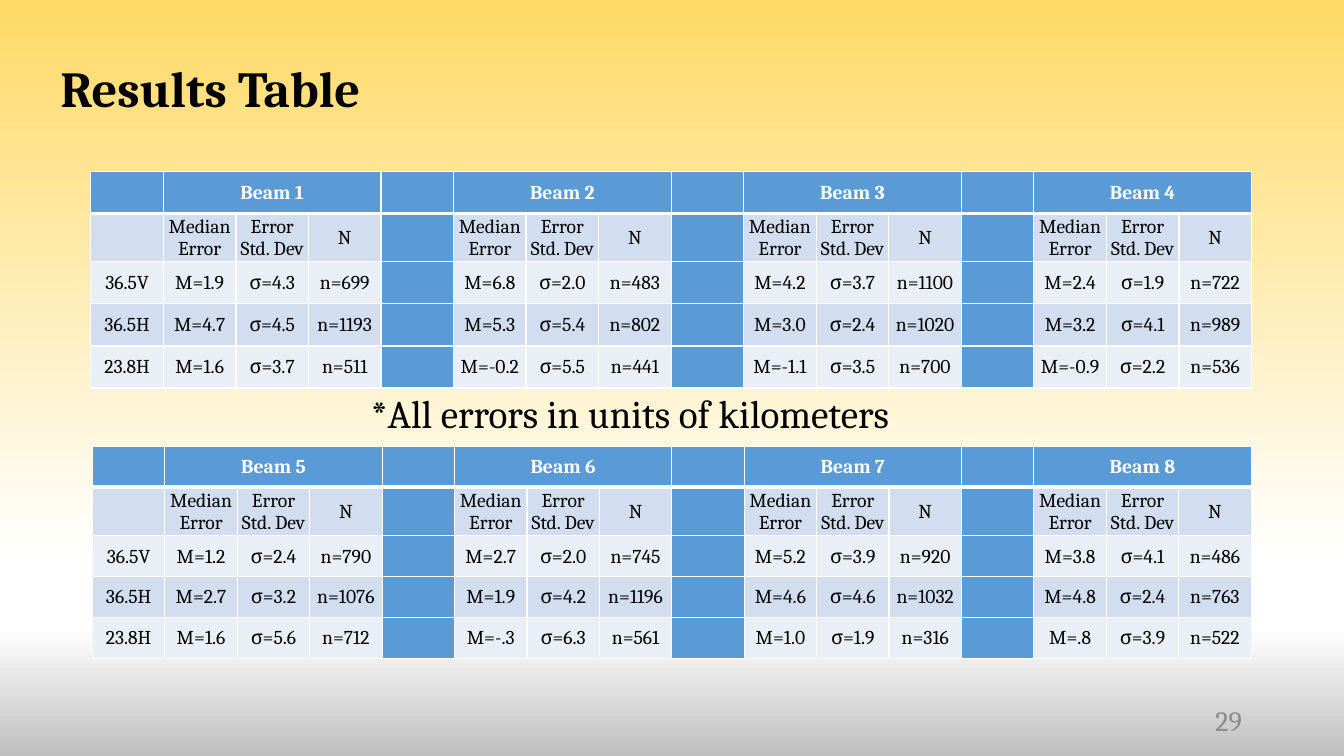
from lxml.etree import SubElement
from pptx import Presentation
from pptx.dml.color import RGBColor
from pptx.enum.text import MSO_ANCHOR, PP_ALIGN
from pptx.oxml.ns import qn
from pptx.util import Cm, Pt

BLACK = RGBColor(0x00, 0x00, 0x00)
WHITE = RGBColor(0xFF, 0xFF, 0xFF)
GRAY = RGBColor(0x8C, 0x8C, 0x8C)
SILVER = RGBColor(0xBF, 0xBF, 0xBF)
GOLD = RGBColor(0xFF, 0xD9, 0x66)
BLUE = RGBColor(0x5B, 0x9B, 0xD5)
MIST = RGBColor(0xD2, 0xDE, 0xEF)
PALE = RGBColor(0xEA, 0xEF, 0xF7)

HEADS = ["Median Error", "Error Std. Dev", "N"]
SIGNS = ["M=", "σ=", "n="]
UPPER = {
    "36.5V": "1.9 4.3 699 6.8 2.0 483 4.2 3.7 1100 2.4 1.9 722",
    "36.5H": "4.7 4.5 1193 5.3 5.4 802 3.0 2.4 1020 3.2 4.1 989",
    "23.8H": "1.6 3.7 511 -0.2 5.5 441 -1.1 3.5 700 -0.9 2.2 536",
}
LOWER = {
    "36.5V": "1.2 2.4 790 2.7 2.0 745 5.2 3.9 920 3.8 4.1 486",
    "36.5H": "2.7 3.2 1076 1.9 4.2 1196 4.6 4.6 1032 4.8 2.4 763",
    "23.8H": "1.6 5.6 712 -.3 6.3 561 1.0 1.9 316 .8 3.9 522",
}


class Deck:
    face = "Cambria"

    def __init__(self):
        self.show = Presentation()
        self.show.slide_width = Cm(33.87)
        self.show.slide_height = Cm(19.05)
        self.slide = self.show.slides.add_slide(self.show.slide_layouts[6])

    def shade(self, stops):
        fill = self.slide.background.fill
        fill.gradient()
        fill.gradient_angle = 270
        ramp = next(self.slide.element.iter(qn("a:gsLst")))
        for old in list(ramp):
            ramp.remove(old)
        for place, color in stops:
            stop = SubElement(ramp, qn("a:gs"), pos=str(place * 1000))
            SubElement(stop, qn("a:srgbClr"), val=str(color))

    def style(self, para, text, size, color, align, bold=False):
        para.text = text
        para.alignment = align
        font = para.font
        font.name, font.size, font.bold = self.face, Pt(size), bold
        font.color.rgb = color

    def text(self, words, left, top, width, height, size, color=BLACK,
             align=PP_ALIGN.LEFT, bold=False, anchor=MSO_ANCHOR.MIDDLE, lead=1.0):
        box = self.slide.shapes.add_textbox(Cm(left), Cm(top), Cm(width), Cm(height))
        frame = box.text_frame
        frame.word_wrap = True
        frame.vertical_anchor = anchor
        para = frame.paragraphs[0]
        self.style(para, words, size, color, align, bold)
        para.line_spacing = lead

    def edge(self, cell, above, below):
        props = cell._tc.get_or_add_tcPr()
        for side, width in zip("LRTB", (1, 1, above, below)):
            line = SubElement(props, qn("a:ln" + side), w=str(Pt(width)))
            paint = SubElement(line, qn("a:solidFill"))
            SubElement(paint, qn("a:srgbClr"), val=str(WHITE))

    def cell(self, cell, words, row, fill):
        self.edge(cell, 3 if row == 1 else 1, 3 if row == 0 else 1)
        cell.fill.solid()
        cell.fill.fore_color.rgb = fill
        cell.vertical_anchor = MSO_ANCHOR.MIDDLE
        cell.margin_left = cell.margin_right = cell.margin_top = Cm(0.03)
        cell.margin_bottom = 0
        self.style(cell.text_frame.paragraphs[0], words, 14,
                   BLACK if row else WHITE, PP_ALIGN.CENTER, row == 0)

    def table(self, left, top, width, heights, first, data):
        rows = [[f"Beam {first + beam}" if part == 0 else ""
                 for beam in range(4) for part in range(3)], HEADS * 4]
        rows += [[sign + num for sign, num in zip(SIGNS * 4, line.split())]
                 for line in data.values()]
        names = ["", "", *data]
        grid = self.slide.shapes.add_table(
            len(rows), 16, Cm(left), Cm(top), Cm(width), Cm(sum(heights))).table
        for col in grid.columns:
            col.width = Cm(width / 16)
        for row, words in enumerate(rows):
            grid.rows[row].height = Cm(heights[row])
            band = BLUE if row == 0 else PALE if row % 2 == 0 else MIST
            for col in range(16):
                beam, part = divmod(col, 4)
                label = words[beam * 3 + part - 1] if part else "" if col else names[row]
                self.cell(grid.cell(row, col), label, row,
                          BLUE if col and not part else band)
        for col in range(1, 16, 4):
            grid.cell(0, col).merge(grid.cell(0, col + 2))


def main():
    deck = Deck()
    deck.shade([(0, GOLD), (74, WHITE), (83, WHITE), (100, SILVER)])
    deck.text("Results Table", 1.27, 1.02, 29.21, 2.54, 36, bold=True, lead=0.9)
    deck.table(2.33, 11.25, 29.21, [1.03, 1.15, 1.03, 1.03, 1.03], 5, LOWER)
    deck.text("29", 23.93, 17.65, 7.62, 1.02, 20, GRAY, PP_ALIGN.RIGHT)
    deck.table(2.29, 4.32, 29.25, [1.06, 1.18, 1.06, 1.06, 1.06], 1, UPPER)
    deck.text("*All errors in units of kilometers", 7.72, 9.91, 16.31, 1.24, 28,
              align=PP_ALIGN.CENTER, anchor=MSO_ANCHOR.TOP, lead=0.8)
    deck.show.save("out.pptx")


if __name__ == "__main__":
    main()
